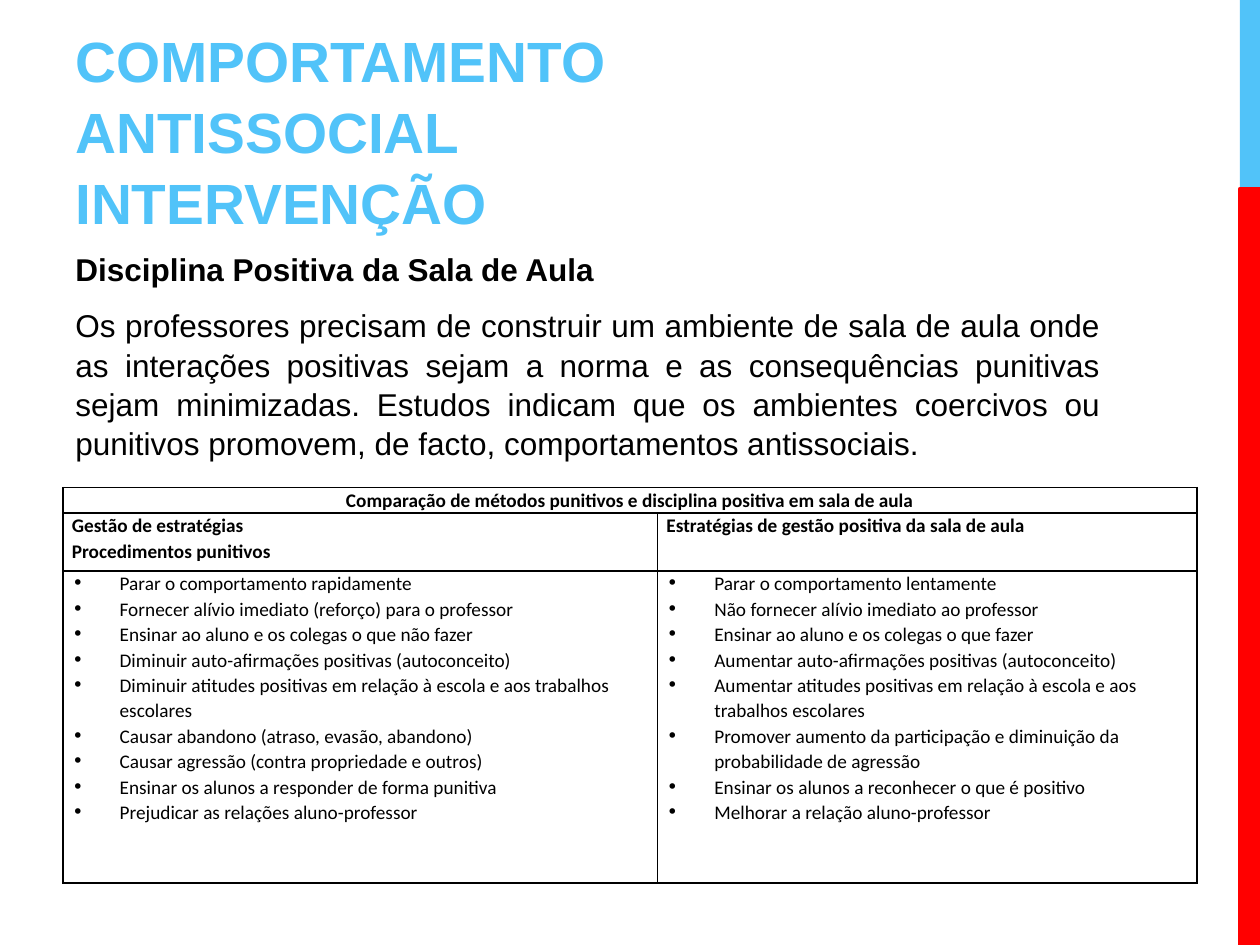
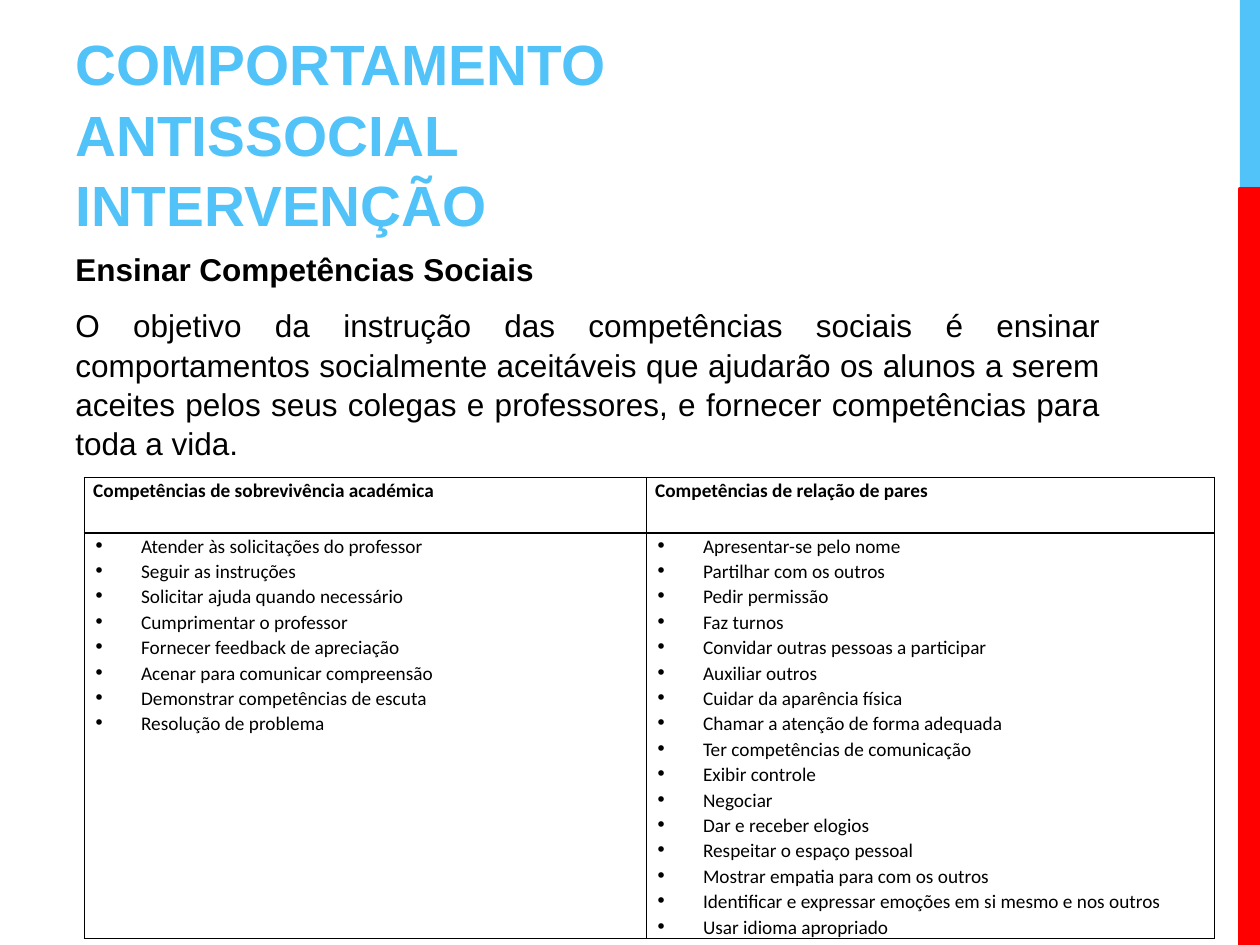
from pptx import Presentation
from pptx.dml.color import RGBColor
from pptx.enum.shapes import MSO_SHAPE
from pptx.enum.text import MSO_ANCHOR, PP_ALIGN
from pptx.oxml.ns import qn
from pptx.util import Inches, Pt
from lxml.etree import SubElement

SKY, RED, BLACK = "51C3F9", "FF0000", "000000"
HEADING_FONT, TABLE_FONT = "Arial", "Calibri"
TITLE = ["COMPORTAMENTO ANTISSOCIAL", "INTERVENÇÃO"]
BAND_X, BAND_W = 9.84, 0.16
HEADING_SPACING, TABLE_SPACING = 1.04, 1.07
HANG = Inches(0.38)

PUNITIVE = [
    "Parar o comportamento rapidamente",
    "Fornecer alívio imediato (reforço) para o professor",
    "Ensinar ao aluno e os colegas o que não fazer",
    "Diminuir auto-afirmações positivas (autoconceito)",
    "Diminuir atitudes positivas em relação à escola e aos trabalhos escolares",
    "Causar abandono (atraso, evasão, abandono)",
    "Causar agressão (contra propriedade e outros)",
    "Ensinar os alunos a responder de forma punitiva",
    "Prejudicar as relações aluno-professor",
]
POSITIVE = [
    "Parar o comportamento lentamente",
    "Não fornecer alívio imediato ao professor",
    "Ensinar ao aluno e os colegas o que fazer",
    "Aumentar auto-afirmações positivas (autoconceito)",
    "Aumentar atitudes positivas em relação à escola e aos trabalhos escolares",
    "Promover aumento da participação e diminuição da probabilidade de agressão",
    "Ensinar os alunos a reconhecer o que é positivo",
    "Melhorar a relação aluno-professor",
]
ACADEMIC = [
    "Atender às solicitações do professor",
    "Seguir as instruções",
    "Solicitar ajuda quando necessário",
    "Cumprimentar o professor",
    "Fornecer feedback de apreciação",
    "Acenar para comunicar compreensão",
    "Demonstrar competências de escuta",
    "Resolução de problema",
]
PEERS = [
    "Apresentar-se pelo nome",
    "Partilhar com os outros",
    "Pedir permissão",
    "Faz turnos",
    "Convidar outras pessoas a participar",
    "Auxiliar outros",
    "Cuidar da aparência física",
    "Chamar a atenção de forma adequada",
    "Ter competências de comunicação",
    "Exibir controle",
    "Negociar",
    "Dar e receber elogios",
    "Respeitar o espaço pessoal",
    "Mostrar empatia para com os outros",
    "Identificar e expressar emoções em si mesmo e nos outros",
    "Usar idioma apropriado",
]


def rgb(color):
    return RGBColor.from_string(color)


def add_run(p, text, size, font, color=BLACK, bold=False):
    r = p.add_run()
    r.text = text
    r.font.size = Pt(size)
    r.font.name = font
    r.font.bold = bold
    r.font.color.rgb = rgb(color)


def add_band(s, y, h, color):
    sp = s.shapes.add_shape(MSO_SHAPE.RECTANGLE, Inches(BAND_X), Inches(y),
                            Inches(BAND_W), Inches(h))
    sp.shadow.inherit = False
    sp.fill.solid()
    sp.fill.fore_color.rgb = rgb(color)
    sp.line.fill.background()
    return sp


def add_side_bands(s):
    add_band(s, 0, 1.5, SKY)
    red = add_band(s, 1.5, 6, RED)
    red.line.color.rgb = rgb(RED)
    red.line.width = Pt(2.25)


def add_text_frame(s, x, y, w, h, anchor):
    tf = s.shapes.add_textbox(Inches(x), Inches(y), Inches(w), Inches(h)).text_frame
    tf.word_wrap = True
    tf.vertical_anchor = anchor
    return tf


def add_title(s, x, y, w, h):
    p = add_text_frame(s, x, y, w, h, MSO_ANCHOR.BOTTOM).paragraphs[0]
    p.line_spacing = HEADING_SPACING
    for i, line in enumerate(TITLE):
        if i:
            p.add_line_break()
        add_run(p, line, 32.4, HEADING_FONT, SKY, True)


def add_body(s, x, y, w, h, heading, text):
    tf = add_text_frame(s, x, y, w, h, MSO_ANCHOR.TOP)
    p = tf.paragraphs[0]
    p.line_spacing = HEADING_SPACING
    add_run(p, heading, 18, HEADING_FONT, bold=True)
    p = tf.add_paragraph()
    p.line_spacing = HEADING_SPACING
    p.space_before = Pt(10)
    p.alignment = PP_ALIGN.JUSTIFY
    add_run(p, text, 18, HEADING_FONT)


def add_bullet(p):
    pPr = p._p.get_or_add_pPr()
    pPr.set("marL", str(HANG))
    pPr.set("indent", str(-HANG))
    clr = SubElement(pPr, qn("a:buClr"))
    SubElement(clr, qn("a:srgbClr"), val=BLACK)
    SubElement(pPr, qn("a:buChar"), char="∙")


def add_borders(cell):
    tcPr = cell._tc.get_or_add_tcPr()
    for edge in ("lnL", "lnR", "lnT", "lnB"):
        ln = SubElement(tcPr, qn("a:" + edge), w=str(Pt(1)))
        fill = SubElement(ln, qn("a:solidFill"))
        SubElement(fill, qn("a:srgbClr"), val=BLACK)


def fill_cell(cell, lines, is_list, align=PP_ALIGN.LEFT):
    cell.margin_left = cell.margin_right = Inches(0.07)
    cell.margin_top = cell.margin_bottom = 0
    tf = cell.text_frame
    for i, line in enumerate(lines):
        p = tf.add_paragraph() if i else tf.paragraphs[0]
        p.alignment = align
        p.line_spacing = TABLE_SPACING
        if is_list:
            add_bullet(p)
        add_run(p, line, 11, TABLE_FONT, bold=not is_list)


def add_comparison(s, x, y, cols, heights, headers, lists, caption=None):
    rows = [headers, lists]
    if caption:
        rows.insert(0, [[caption], []])
    table = s.shapes.add_table(len(rows), len(cols), Inches(x), Inches(y),
                               Inches(sum(cols)), Inches(sum(heights))).table
    table.first_row = table.horz_banding = False
    for col, w in zip(table.columns, cols):
        col.width = Inches(w)
    for row, h in zip(table.rows, heights):
        row.height = Inches(h)
    for i, row in enumerate(rows):
        for j, lines in enumerate(row):
            cell = table.cell(i, j)
            add_borders(cell)
            cell.fill.background()
            centred = caption and i == 0
            fill_cell(cell, lines, row is lists,
                      PP_ALIGN.CENTER if centred else PP_ALIGN.LEFT)
    if caption:
        table.cell(0, 0).merge(table.cell(0, len(cols) - 1))


def add_topic_slide(prs, title_y, heading, text, comparison):
    s = prs.slides.add_slide(prs.slide_layouts[6])
    add_side_bands(s)
    add_title(s, 0.5, title_y, 6.33, 1.5)
    add_body(s, 0.5, 1.92, 8.33, 4.78, heading, text)
    add_comparison(s, **comparison)


def main():
    prs = Presentation()
    prs.slide_width, prs.slide_height = Inches(10), Inches(7.5)
    add_topic_slide(
        prs, 0.42, "Disciplina Positiva da Sala de Aula",
        "Os professores precisam de construir um ambiente de sala de aula onde as "
        "interações positivas sejam a norma e as consequências punitivas sejam "
        "minimizadas. Estudos indicam que os ambientes coercivos ou punitivos "
        "promovem, de facto, comportamentos antissociais.",
        dict(x=0.5, y=3.87, cols=[4.72, 4.28], heights=[0.2, 0.46, 2.48],
             headers=[["Gestão de estratégias", "Procedimentos punitivos"],
                      ["Estratégias de gestão positiva da sala de aula"]],
             lists=[PUNITIVE, POSITIVE],
             caption="Comparação de métodos punitivos e disciplina positiva "
                     "em sala de aula"))
    add_topic_slide(
        prs, 0.44, "Ensinar Competências Sociais",
        "O objetivo da instrução das competências sociais é ensinar comportamentos "
        "socialmente aceitáveis que ajudarão os alunos a serem aceites pelos seus "
        "colegas e professores, e fornecer competências para toda a vida.",
        dict(x=0.67, y=3.79, cols=[4.46, 4.51], heights=[0.44, 3.22],
             headers=[["Competências de sobrevivência académica"],
                      ["Competências de relação de pares"]],
             lists=[ACADEMIC, PEERS]))
    prs.save("out.pptx")


if __name__ == "__main__":
    main()
